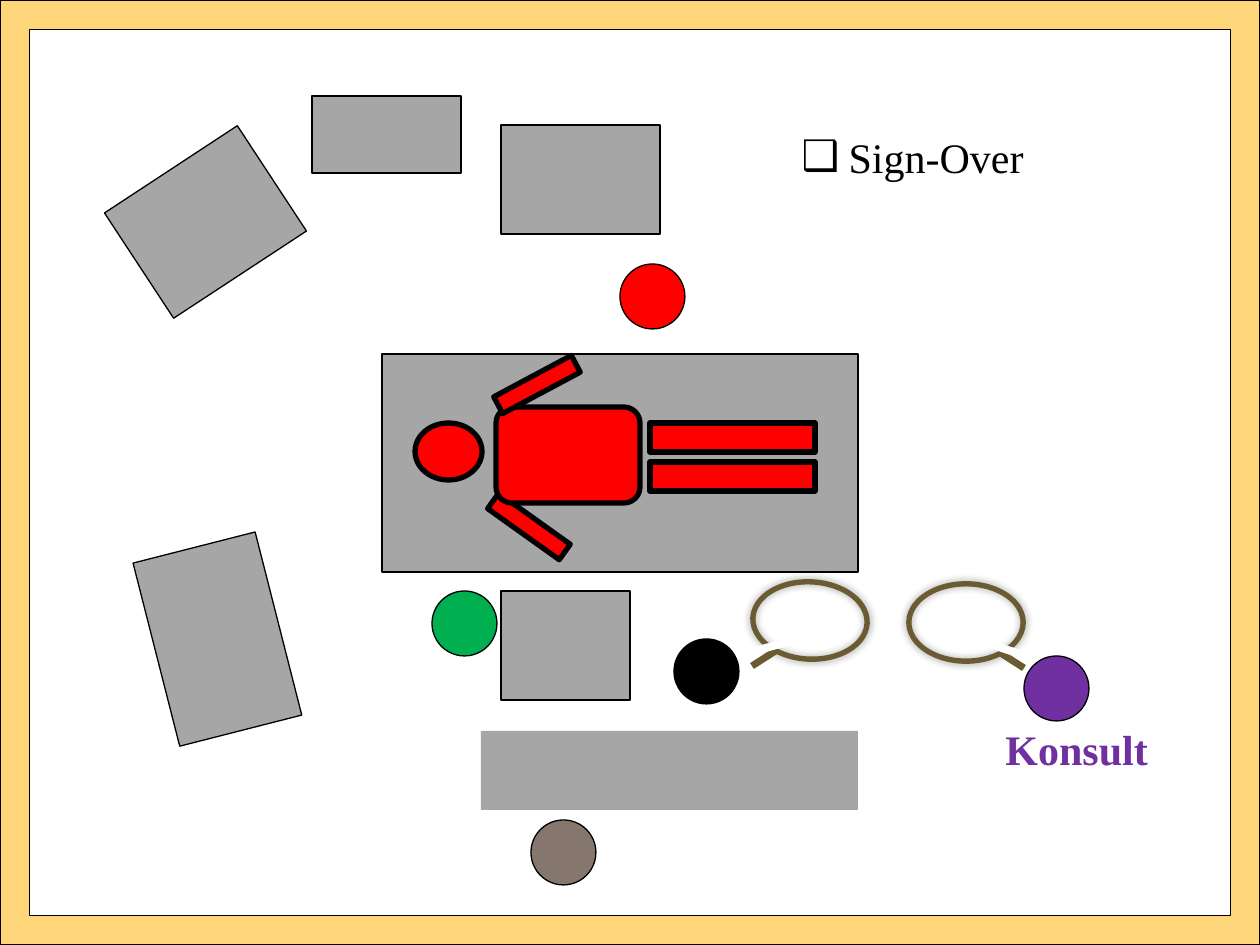
"""Build the operating room sign-over slide."""

from dataclasses import dataclass

from lxml import etree
from pptx import Presentation
from pptx.dml.color import RGBColor
from pptx.enum.shapes import MSO_CONNECTOR, MSO_SHAPE
from pptx.enum.text import MSO_AUTO_SIZE
from pptx.oxml.ns import qn
from pptx.util import Emu, Pt

RECT = MSO_SHAPE.RECTANGLE
ROUND = MSO_SHAPE.ROUNDED_RECTANGLE
OVAL = MSO_SHAPE.OVAL
DONUT = MSO_SHAPE.DONUT
FRAME = MSO_SHAPE.FRAME
LINE = MSO_CONNECTOR.STRAIGHT
GROW = MSO_AUTO_SIZE.SHAPE_TO_FIT_TEXT
SCALE = 914400 / 126
DOT = 65


@dataclass(frozen=True)
class Theme:
    font: str = "Times New Roman"
    size: int = 24
    thin: float = 0.75
    thick: float = 3
    tail: float = 4
    black: str = "000000"
    white: str = "FFFFFF"
    gold: str = "FFD579"
    grey: str = "A6A6A6"
    red: str = "FF0000"
    green: str = "00B050"
    purple: str = "7030A0"
    taupe: str = "85776D"
    brown: str = "6B5B32"


THEME = Theme()


@dataclass(frozen=True)
class Part:
    x: int
    y: int
    w: int
    h: int
    fill: str = THEME.grey
    kind: int = RECT
    turn: float = 0
    line: str | None = THEME.black
    width: float = THEME.thin
    adj: float | None = None


@dataclass(frozen=True)
class Bubble:
    x: int
    y: int
    turn: float
    flip: bool


def limb(x: int, y: int, w: int, h: int, kind: int = RECT, turn: float = 0) -> Part:
    """Describe one part of the patient."""
    return Part(x, y, w, h, THEME.red, kind, turn, width=THEME.thick)


def dot(x: int, y: int, fill: str) -> Part:
    """Describe one member of the team."""
    return Part(x, y, DOT, DOT, fill, OVAL)


BORDER = Part(0, 0, 1260, 945, THEME.gold, FRAME, adj=0.031)
PATIENT = [
    Part(382, 354, 476, 218),
    limb(415, 423, 67, 57, OVAL),
    limb(650, 462, 165, 29),
    limb(485, 517, 88, 19, turn=35.5),
    limb(496, 407, 144, 96, ROUND),
    limb(650, 423, 165, 29),
    limb(493, 375, 88, 19, turn=331.9),
]
ROOM = [
    Part(481, 731, 377, 79, line=None),
    dot(674, 639, THEME.black),
    dot(432, 591, THEME.green),
    dot(620, 264, THEME.red),
    Part(501, 125, 159, 109),
    Part(126, 159, 159, 126, turn=326.7),
    Part(123, 576, 189, 126, turn=255.7),
    Part(501, 591, 129, 109),
    Part(312, 96, 149, 77),
]
BUBBLES = [Bubble(751, 580, 2.6, False), Bubble(907, 582, 0, True)]
LATE = [dot(1024, 656, THEME.purple), dot(531, 820, THEME.taupe)]


def px(num: float) -> Emu:
    """Turn px into EMU."""
    return Emu(round(num * SCALE))


def draw(shapes, part: Part):
    """Draw one preset shape."""
    shape = shapes.add_shape(part.kind, *map(px, (part.x, part.y, part.w, part.h)))
    shape.shadow.inherit = False
    shape.rotation = part.turn
    if part.adj is not None:
        shape.adjustments[0] = part.adj
    shape.fill.solid()
    shape.fill.fore_color.rgb = RGBColor.from_string(part.fill)
    if part.line:
        shape.line.color.rgb = RGBColor.from_string(part.line)
        shape.line.width = Pt(part.width)
    else:
        shape.line.fill.background()
    return shape


def glow(shape) -> None:
    """Put a soft shadow around a shape."""
    effects = shape.element.spPr.find(qn("a:effectLst"))
    outer = etree.SubElement(effects, qn("a:outerShdw"), blurRad=str(Pt(5)), dist="0")
    color = etree.SubElement(outer, qn("a:srgbClr"), val=THEME.black)
    etree.SubElement(color, qn("a:alpha"), val="40000")


def speak(shapes, item: Bubble) -> None:
    """Draw a speech bubble, mirrored when flipped."""
    wide = 118

    def side(off: int, w: int = 0) -> int:
        """Place an offset from the left or the mirrored edge."""
        return item.x + (wide - off - w if item.flip else off)

    group = shapes.add_group_shape().shapes
    glow(draw(group, Part(item.x, item.y, wide, 81, THEME.brown, DONUT,
                          item.turn, THEME.brown, 1, 0.045)))
    ends = (side(26), item.y + 70, side(1), item.y + 86)
    tail = group.add_connector(LINE, *map(px, ends))
    tail.line.color.rgb = RGBColor.from_string(THEME.brown)
    tail.line.width = Pt(THEME.tail)
    etree.SubElement(tail.element.spPr, qn("a:effectLst"))
    turn = 288.3 if item.flip else 74.3
    draw(group, Part(side(25, 8), item.y + 39, 8, 50, THEME.white, turn=turn, line=None))


def write(shape, text: str, *, color: str = THEME.black, bold: bool = False,
          wrap: bool = True, bullet: str | None = None) -> None:
    """Fill a shape with one formatted paragraph."""
    frame = shape.text_frame
    frame.word_wrap = wrap
    frame.auto_size = GROW
    para = frame.paragraphs[0]
    para.space_before = Pt(0)
    run = para.add_run()
    run.text = text
    font = run.font
    font.name, font.size, font.bold = THEME.font, Pt(THEME.size), bold
    font.color.rgb = RGBColor.from_string(color)
    if bullet:
        props = para._p.get_or_add_pPr()
        props.set("marL", str(px(47)))
        props.set("indent", str(px(-47)))
        etree.SubElement(props, qn("a:buChar"), char=bullet)


def main() -> None:
    """Build and save the slide."""
    deck = Presentation()
    deck.slide_width, deck.slide_height = px(1260), px(945)
    slide = deck.slides.add_slide(deck.slide_layouts[1])
    shapes = slide.shapes
    title = shapes.title.element
    title.getparent().remove(title)

    for part in [BORDER, *PATIENT, *ROOM]:
        draw(shapes, part)
    body = slide.placeholders[1]
    body.left, body.top, body.width, body.height = map(px, (789, 125, 268, 63))
    write(body, "Sign-Over", bullet="❑")
    label = shapes.add_textbox(*map(px, (993, 717, 169, 63)))
    write(label, "Konsult", color=THEME.purple, bold=True, wrap=False)
    for item in BUBBLES:
        speak(shapes, item)
    for part in LATE:
        draw(shapes, part)
    deck.save("out.pptx")


if __name__ == "__main__":
    main()
